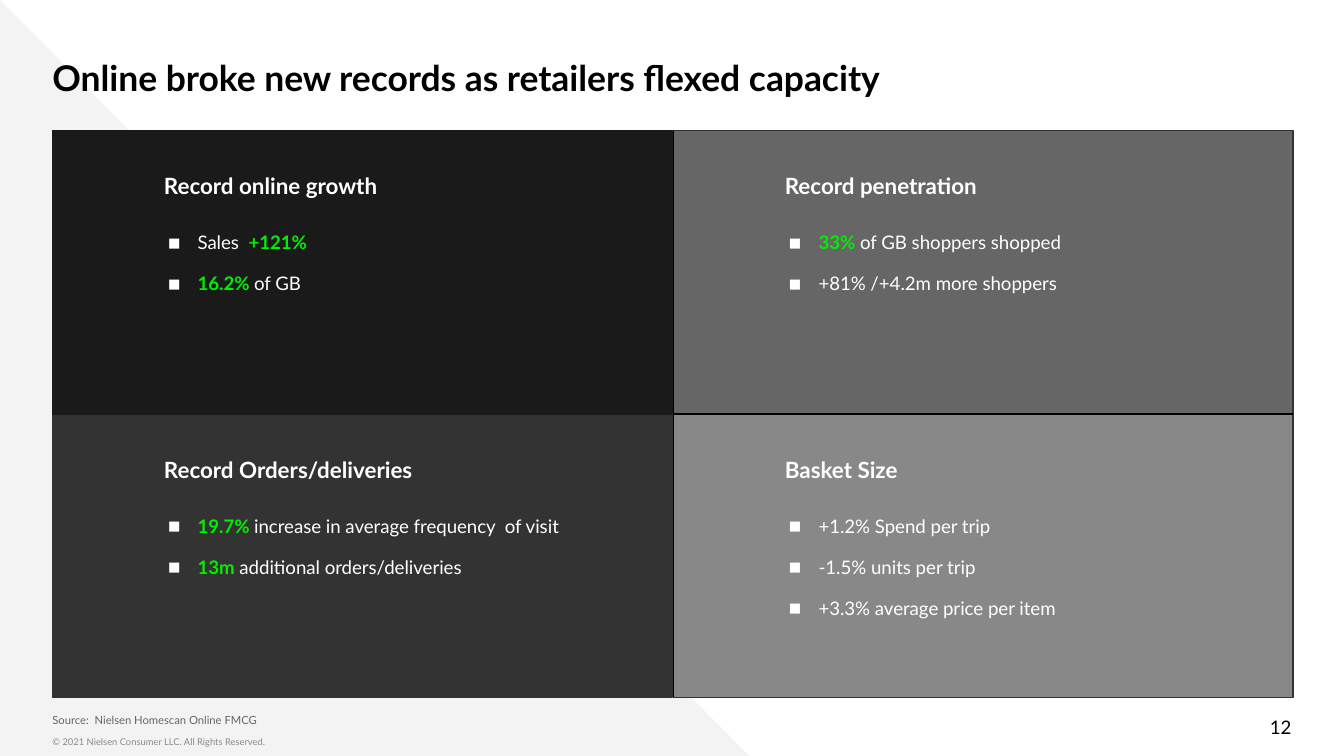
from dataclasses import dataclass
from typing import NamedTuple

from lxml import etree
from pptx import Presentation
from pptx.dml.color import RGBColor
from pptx.enum.shapes import MSO_CONNECTOR, MSO_SHAPE
from pptx.enum.text import MSO_ANCHOR, MSO_AUTO_SIZE, PP_ALIGN
from pptx.oxml.ns import qn
from pptx.util import Inches, Pt

TOP, MIDDLE, BOTTOM = MSO_ANCHOR.TOP, MSO_ANCHOR.MIDDLE, MSO_ANCHOR.BOTTOM
LEFT, RIGHT = PP_ALIGN.LEFT, PP_ALIGN.RIGHT
NO_FIT = MSO_AUTO_SIZE.NONE
RECTANGLE, RIGHT_TRIANGLE = MSO_SHAPE.RECTANGLE, MSO_SHAPE.RIGHT_TRIANGLE
STRAIGHT = MSO_CONNECTOR.STRAIGHT

BLACK = RGBColor(0x00, 0x00, 0x00)
NEAR_BLACK = RGBColor(0x1A, 0x1A, 0x1A)
CHARCOAL = RGBColor(0x33, 0x33, 0x33)
GREY = RGBColor(0x66, 0x66, 0x66)
LIGHT_GREY = RGBColor(0x88, 0x88, 0x88)
PALE_GREY = RGBColor(0xF3, 0xF3, 0xF3)
WHITE = RGBColor(0xFF, 0xFF, 0xFF)
GREEN = RGBColor(0x00, 0xF0, 0x00)

FONT = "Lato"
SLIDE_WIDTH = 10
SLIDE_HEIGHT = SLIDE_WIDTH * 9 / 16
GRID_LEFT, GRID_TOP = 0.39, 0.97
PANEL_WIDTH, PANEL_HEIGHT = 4.61, 2.11
COLUMN_PITCH = 4.62
MIDDLE_X = GRID_LEFT + COLUMN_PITCH
MIDDLE_Y = GRID_TOP + PANEL_HEIGHT
GRID_RIGHT = MIDDLE_X + PANEL_WIDTH
GRID_BOTTOM = MIDDLE_Y + PANEL_HEIGHT


class Span(NamedTuple):
    text: str
    highlight: bool = False


@dataclass(frozen=True)
class Panel:
    column: int
    row: int
    fill: RGBColor
    outline: RGBColor
    heading: str
    bullets: list[list[Span]]

    @property
    def left(self) -> float:
        return GRID_LEFT + self.column * COLUMN_PITCH

    @property
    def top(self) -> float:
        return GRID_TOP + self.row * PANEL_HEIGHT


PANELS = [
    Panel(0, 0, NEAR_BLACK, NEAR_BLACK, "Record online growth", [
        [Span("Sales  "), Span("+121%", True)],
        [Span("16.2% ", True), Span("of GB")],
    ]),
    Panel(1, 0, GREY, CHARCOAL, "Record penetration", [
        [Span("33%", True), Span(" of GB shoppers shopped")],
        [Span("+81% /+4.2m more shoppers")],
    ]),
    Panel(0, 1, CHARCOAL, CHARCOAL, "Record Orders/deliveries", [
        [Span("19.7% ", True), Span("increase in average frequency  of visit")],
        [Span("13m", True), Span(" additional orders/deliveries")],
    ]),
    Panel(1, 1, LIGHT_GREY, CHARCOAL, "Basket Size", [
        [Span("+1.2% Spend per trip")],
        [Span("-1.5% units per trip")],
        [Span("+3.3% average price per item")],
    ]),
]


def place(shape, left: float, top: float, width: float, height: float) -> None:
    shape.left, shape.top = Inches(left), Inches(top)
    shape.width, shape.height = Inches(width), Inches(height)


def add_box(page, left: float, top: float, width: float, height: float):
    return page.shapes.add_textbox(Inches(left), Inches(top), Inches(width), Inches(height))


def set_frame(box, anchor=TOP, inset: float = 0.1):
    frame = box.text_frame
    frame.word_wrap = True
    frame.auto_size = NO_FIT
    frame.vertical_anchor = anchor
    frame.margin_left = frame.margin_right = 0
    frame.margin_top = frame.margin_bottom = Inches(inset)
    return frame


def add_span(para, text: str, size: float, color: RGBColor, bold: bool = False) -> None:
    span = para.add_run()
    span.text = text
    span.font.name = FONT
    span.font.size = Pt(size)
    span.font.bold = bold
    span.font.color.rgb = color


def write(box, text: str, *, size: float, color: RGBColor, bold: bool = False,
          align=LEFT, anchor=TOP, inset: float = 0.1) -> None:
    para = set_frame(box, anchor, inset).paragraphs[0]
    para.alignment = align
    para.line_spacing = 1.0
    para.space_before = Pt(0)
    add_span(para, text, size, color, bold)


def add_bullet(para) -> None:
    properties = para._p.get_or_add_pPr()
    properties.set("marL", str(Inches(0.25)))
    properties.set("indent", str(Inches(-0.22)))
    bullet_color = etree.SubElement(properties, qn("a:buClr"))
    etree.SubElement(bullet_color, qn("a:srgbClr"), val=str(WHITE))
    etree.SubElement(properties, qn("a:buSzPct"), val="70000")
    etree.SubElement(properties, qn("a:buFont"), typeface=FONT)
    etree.SubElement(properties, qn("a:buChar"), char="■")


def write_bullets(box, bullets: list[list[Span]]) -> None:
    frame = set_frame(box)
    for index, spans in enumerate(bullets):
        para = frame.add_paragraph() if index else frame.paragraphs[0]
        add_bullet(para)
        if index:
            para.space_before = Pt(10)
        for span in spans:
            add_span(para, span.text, 10, GREEN if span.highlight else WHITE, span.highlight)


def draw_panel(page, panel: Panel) -> None:
    tile = page.shapes.add_shape(RECTANGLE, Inches(panel.left), Inches(panel.top),
                                 Inches(PANEL_WIDTH), Inches(PANEL_HEIGHT))
    tile.shadow.inherit = False
    tile.fill.solid()
    tile.fill.fore_color.rgb = panel.fill
    tile.line.color.rgb = panel.outline
    tile.line.width = Pt(0.75)


def draw_panel_text(page, panel: Panel) -> None:
    left = panel.left + 0.83
    heading = add_box(page, left, panel.top + 0.17, 2.96, 0.48)
    write(heading, panel.heading, size=12, color=WHITE, bold=True, anchor=MIDDLE)
    write_bullets(add_box(page, left, panel.top + 0.65, 3.41, 1.14), panel.bullets)


def draw_divider(page, x1: float, y1: float, x2: float, y2: float) -> None:
    divider = page.shapes.add_connector(STRAIGHT, Inches(x1), Inches(y1),
                                        Inches(x2), Inches(y2))
    divider.line.color.rgb = BLACK
    divider.line.width = Pt(0.75)
    etree.SubElement(divider.element.spPr, qn("a:effectLst"))


def draw_backdrop(page) -> None:
    """Draw the pale corner triangle behind the placeholders."""
    triangle = page.shapes.add_shape(RIGHT_TRIANGLE, 0, 0, Inches(5.59), Inches(5.64))
    triangle.shadow.inherit = False
    triangle.fill.solid()
    triangle.fill.fore_color.rgb = PALE_GREY
    triangle.line.fill.background()
    page.shapes.title.element.addprevious(triangle.element)


def main() -> None:
    deck = Presentation()
    deck.slide_width, deck.slide_height = Inches(SLIDE_WIDTH), Inches(SLIDE_HEIGHT)
    page = deck.slides.add_slide(deck.slide_layouts[0])
    draw_backdrop(page)

    title, source = page.shapes.title, page.placeholders[1]
    place(title, GRID_LEFT, 0.32, 9.22, 0.43)
    write(title, "Online broke new records as retailers flexed capacity",
          size=19, color=BLACK, bold=True)
    place(source, GRID_LEFT, 5.31, 8.92, 0.2)
    write(source, "Source:  Nielsen Homescan Online FMCG", size=6, color=GREY, anchor=BOTTOM)

    write(add_box(page, GRID_LEFT, 5.43, 5.54, 0.2),
          "© 2021 Nielsen Consumer LLC. All Rights Reserved.",
          size=5, color=LIGHT_GREY, inset=0.05)
    write(add_box(page, 7.36, 5.26, 2.25, 0.3), "12",
          size=10, color=BLACK, align=RIGHT, anchor=MIDDLE, inset=0.05)

    # The darkest panel lies over the dividers.
    darkest, *others = PANELS
    for panel in others:
        draw_panel(page, panel)
    draw_divider(page, MIDDLE_X, GRID_TOP, MIDDLE_X, GRID_BOTTOM)
    draw_divider(page, GRID_LEFT, MIDDLE_Y, GRID_RIGHT, MIDDLE_Y)
    draw_panel(page, darkest)
    for panel in PANELS:
        draw_panel_text(page, panel)

    deck.save("out.pptx")


if __name__ == "__main__":
    main()
